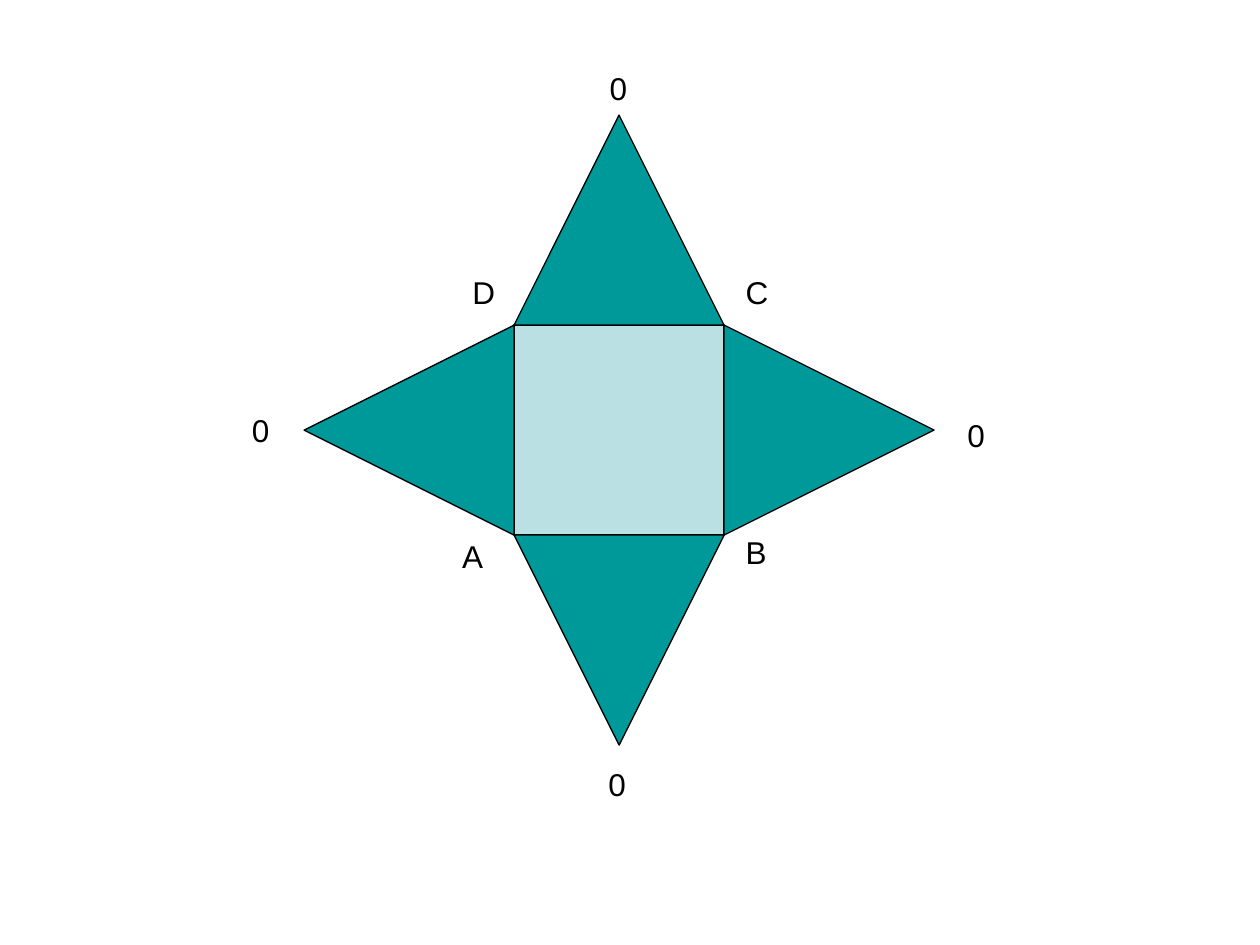
"""Build a slide with the net of a square pyramid and its vertex labels."""
from pptx import Presentation
from pptx.dml.color import RGBColor
from pptx.enum.shapes import MSO_SHAPE
from pptx.enum.text import MSO_AUTO_SIZE
from pptx.util import Inches, Pt

SQUARE = MSO_SHAPE.RECTANGLE
TRIANGLE = MSO_SHAPE.ISOSCELES_TRIANGLE
GROW = MSO_AUTO_SIZE.SHAPE_TO_FIT_TEXT
BLACK = RGBColor(0x00, 0x00, 0x00)
TEAL = RGBColor(0x00, 0x99, 0x99)
PALE_TEAL = RGBColor(0xBB, 0xE0, 0xE3)

deck = Presentation()
deck.slide_width, deck.slide_height = Inches(10), Inches(7.5)
page = deck.slides.add_slide(deck.slide_layouts[6])

side = deck.slide_width // 6
base_left, base_top = Inches(4.08), Inches(2.58)

faces = [
    (SQUARE, 0, 0, 0, PALE_TEAL),
    (TRIANGLE, 0, -1, 0, TEAL),
    (TRIANGLE, -1, 0, 270, TEAL),
    (TRIANGLE, 0, 1, 180, TEAL),
    (TRIANGLE, 1, 0, 90, TEAL),
]
for kind, column, row, turn, color in faces:
    face = page.shapes.add_shape(
        kind, base_left + column * side, base_top + row * side, side, side)
    face.rotation = turn
    face.shadow.inherit = False
    face.fill.solid()
    face.fill.fore_color.rgb = color
    face.line.color.rgb = BLACK
    face.line.width = Pt(0.75)

labels = [
    ("0", 1.9, 3.21, 0.34),
    ("0", 4.74, 0.5, 0.34),
    ("0", 4.73, 6.02, 0.34),
    ("0", 7.58, 3.25, 0.34),
    ("A", 3.57, 4.21, 0.37),
    ("B", 5.82, 4.18, 0.37),
    ("D", 3.65, 2.12, 0.38),
    ("C", 5.82, 2.12, 0.38),
]
for name, left, top, width in labels:
    box = page.shapes.add_textbox(
        Inches(left), Inches(top), Inches(width), Inches(0.4))
    frame = box.text_frame
    frame.word_wrap = False
    frame.auto_size = GROW
    frame.text = name
    font = frame.paragraphs[0].runs[0].font
    font.name = "Arial"
    font.size = Pt(18)
    font.color.rgb = BLACK

deck.save("out.pptx")
